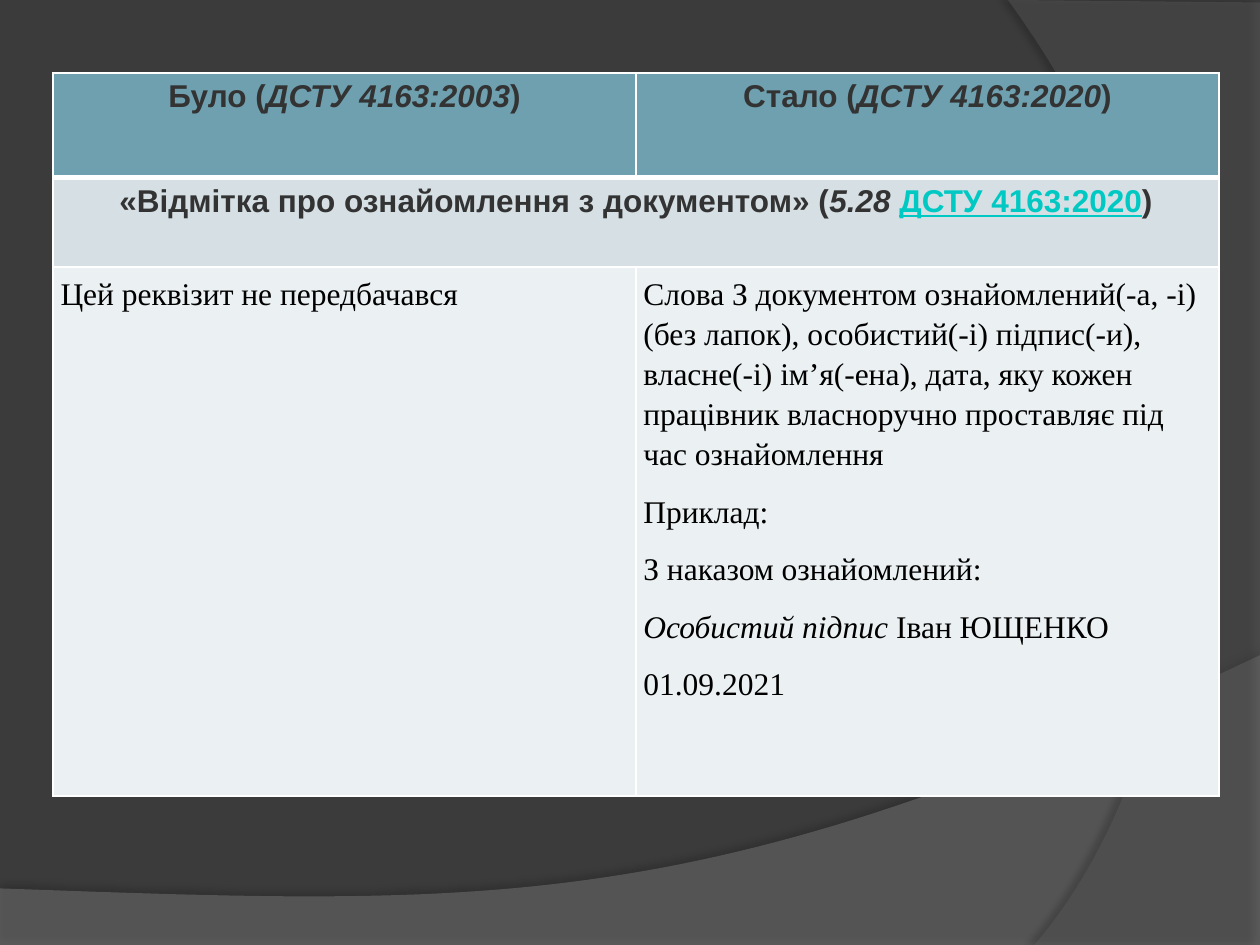
from dataclasses import dataclass

from lxml import etree
from pptx import Presentation
from pptx.dml.color import RGBColor
from pptx.enum.text import PP_ALIGN
from pptx.oxml.ns import qn
from pptx.util import Cm, Pt

CENTER, LEFT = PP_ALIGN.CENTER, PP_ALIGN.LEFT
BLANK = 6


@dataclass(frozen=True)
class Theme:
    back: str = "3B3B3B"
    wave: str = "7F7F7F"
    side: str = "5E5E5E"
    shade: str = "000000"
    rule: str = "FFFFFF"
    head: str = "6EA0B0"
    band: str = "D5DFE4"
    body: str = "EBF0F2"
    dark: str = "333333"
    ink: str = "000000"
    link: str = "00C8C3"
    sans: str = "Arial"
    serif: str = "Times New Roman"
    size: float = 18
    thin: float = 1
    thick: float = 3


THEME = Theme()

# Each cell is a list of paragraphs, each paragraph a list of (text, mark):
# mark "i" is italic, "u" is the link look.
HEADS = [
    [[("Було (", ""), ("ДСТУ 4163:2003", "i"), (")", "")]],
    [[("Стало (", ""), ("ДСТУ 4163:2020", "i"), (")", "")]],
]
BAND = [[
    ("«Відмітка про ознайомлення з документом» (", ""),
    ("5.28 ", "i"), ("ДСТУ 4163:2020", "u"), (")", ""),
]]
BEFORE = [[("Цей реквізит не передбачався", "")]]
AFTER = [
    [("Слова З документом ознайомлений(-а, -і) (без лапок), особистий(-і) "
      "підпис(-и), власне(-і) ім’я(-ена), дата, яку кожен працівник "
      "власноручно проставляє під час ознайомлення", "")],
    [("Приклад:", "")],
    [("З наказом ознайомлений:", "")],
    [("Особистий підпис", "i"), (" Іван ЮЩЕНКО", "")],
    [("01.09.2021", "")],
]


def paint(fill, color):
    fill.solid()
    fill.fore_color.rgb = RGBColor.from_string(color)


def add_tint(parent, color, alpha):
    """Append a colour with its opacity in percent."""
    tint = etree.SubElement(parent, qn("a:srgbClr"), val=color)
    etree.SubElement(tint, qn("a:alpha"), val=str(alpha * 1000))


def bend(start, one, two, end, steps=60):
    """Points along a cubic curve, without its start."""
    for step in range(1, steps + 1):
        t = step / steps
        u = 1 - t
        yield tuple(
            u**3 * a + 3 * u * u * t * b + 3 * u * t * t * c + t**3 * d
            for a, b, c, d in zip(start, one, two, end)
        )


def add_swoosh(slide, box, line, curve, color, alpha, shadow):
    """Draw straight edges, then one curve from the last point, and close."""
    left, top = box
    points = [
        (Cm(left + x), Cm(top + y))
        for x, y in line + list(bend(line[-1], *curve))
    ]
    pen = slide.shapes.build_freeform(*points[0])
    pen.add_line_segments(points[1:], close=True)
    shape = pen.convert_to_shape()
    shape.line.fill.background()
    shape.shadow.inherit = False
    paint(shape.fill, color)
    props = shape._element.spPr
    solid = props.find(qn("a:solidFill"))
    solid.clear()
    add_tint(solid, color, alpha)
    dense, blur, dist, angle = shadow
    cast = etree.SubElement(
        props.find(qn("a:effectLst")), qn("a:outerShdw"),
        blurRad=str(Pt(blur)), dist=str(Pt(dist)),
        dir=str(angle * 60000), rotWithShape="0",
    )
    add_tint(cast, THEME.shade, dense)


def add_backdrop(slide):
    paint(slide.background.fill, THEME.back)
    add_swoosh(
        slide, (0, 13.21), [(0, 4.7), (0, 5.84), (25.4, 5.84), (25.4, 0)],
        [(14.2, 5.31), (9.93, 5.05), (0, 4.7)],
        THEME.wave, 45, (35, 4, 3.5, 270),
    )
    add_swoosh(
        slide, (20.32, 0), [(5.08, 0.05), (5.08, 19.05), (0.53, 19.05)],
        [(3.43, 15.72), (5.54, 7.62), (0, 0)],
        THEME.side, 40, (45, 4, 4, 180),
    )


def rule_cell(cell, top, bottom):
    props = cell._tc.get_or_add_tcPr()
    widths = {"L": THEME.thin, "R": THEME.thin, "T": top, "B": bottom}
    for spot, (edge, width) in enumerate(widths.items()):
        line = etree.Element(qn("a:ln" + edge), w=str(Pt(width)))
        solid = etree.SubElement(line, qn("a:solidFill"))
        etree.SubElement(solid, qn("a:srgbClr"), val=THEME.rule)
        props.insert(spot, line)


def write(cell, paras, face, color, bold, align):
    frame = cell.text_frame
    for spot, parts in enumerate(paras):
        para = frame.add_paragraph() if spot else frame.paragraphs[0]
        para.alignment = align
        for text, mark in parts:
            run = para.add_run()
            run.text = text
            font = run.font
            font.name, font.size = face, Pt(THEME.size)
            font.bold, font.italic = bold, mark == "i"
            font.underline = mark == "u"
            shade = THEME.link if mark == "u" else color
            font.color.rgb = RGBColor.from_string(shade)


def write_body(cell, paras):
    write(cell, paras, THEME.serif, THEME.ink, False, LEFT)
    cell.margin_left = cell.margin_right = Cm(0.15)
    cell.margin_top = cell.margin_bottom = Cm(0.1)
    for para in cell.text_frame.paragraphs:
        para.line_spacing = 1.15
        para.space_after = Pt(10)


def add_grid(slide, left, top, width, rows):
    frame = slide.shapes.add_table(
        len(rows), 2, Cm(left), Cm(top), Cm(width), Cm(sum(rows)))
    table = frame.table
    for col in table.columns:
        col.width = Cm(width / 2)
    fills = [THEME.head, THEME.band, THEME.body]
    edges = [THEME.thin, THEME.thick, THEME.thin, THEME.thin]
    for spot, (high, fill) in enumerate(zip(rows, fills)):
        table.rows[spot].height = Cm(high)
        for cell in table.rows[spot].cells:
            paint(cell.fill, fill)
            rule_cell(cell, edges[spot], edges[spot + 1])
    band = table.cell(1, 0)
    band.merge(table.cell(1, 1))
    titles = [*zip(table.rows[0].cells, HEADS), (band, BAND)]
    for cell, paras in titles:
        write(cell, paras, THEME.sans, THEME.dark, True, CENTER)
    for cell, paras in zip(table.rows[2].cells, (BEFORE, AFTER)):
        write_body(cell, paras)


def main():
    deck = Presentation()
    deck.slide_width, deck.slide_height = Cm(25.4), Cm(19.05)
    slide = deck.slides.add_slide(deck.slide_layouts[BLANK])
    add_backdrop(slide)
    add_grid(slide, 1.07, 1.47, 23.5, [2.11, 1.8, 10.67])
    deck.save("out.pptx")


if __name__ == "__main__":
    main()
